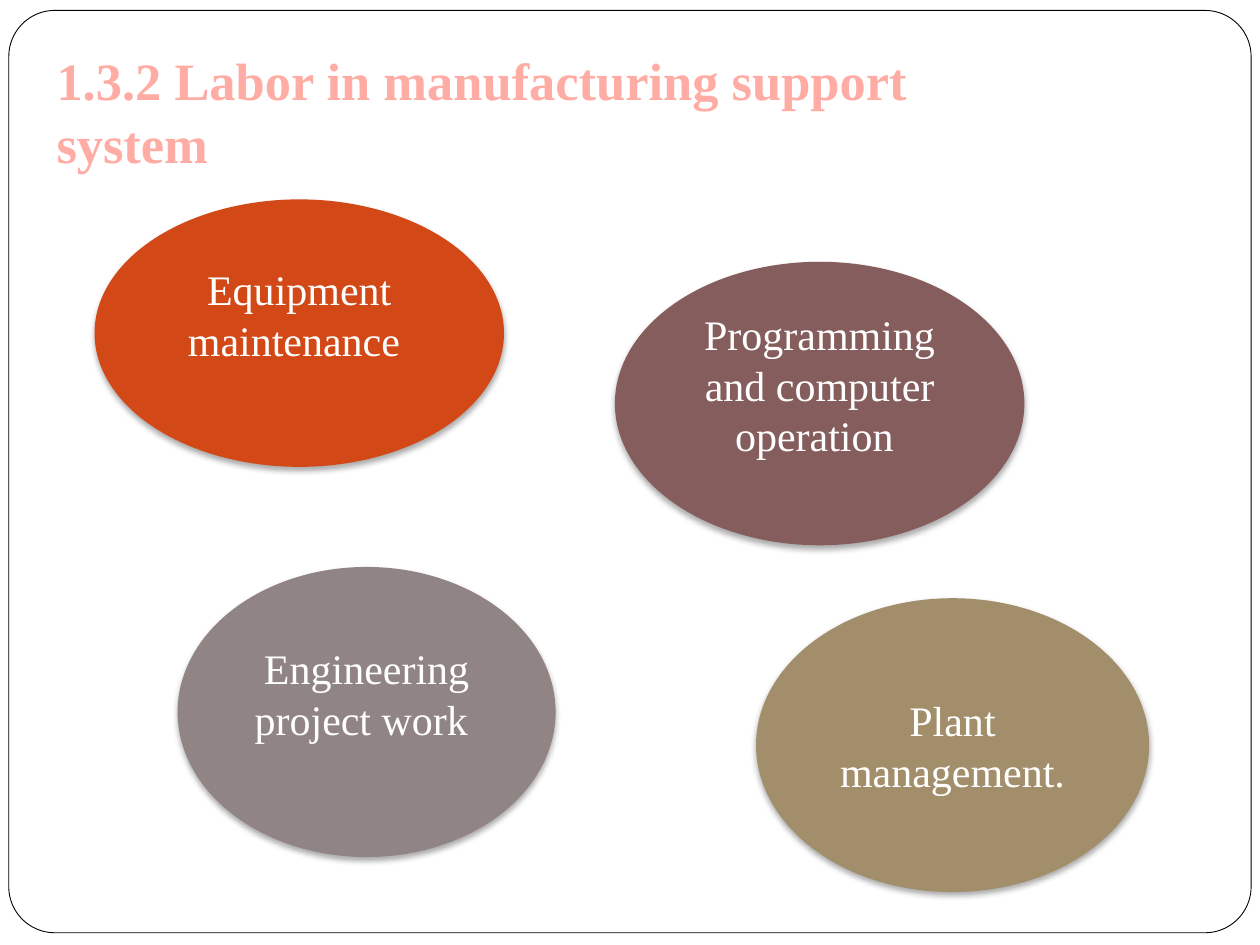
"""Build the slide on labor in manufacturing support systems."""
from lxml import etree
from pptx import Presentation
from pptx import util as u
from pptx.dml.color import RGBColor
from pptx.enum import shapes, text
from pptx.oxml import ns

TITLE = "1.3.2 Labor in manufacturing support system"
ROLES = [
    {"name": "Equipment maintenance ", "at": (0.075, 0.211, 0.325, 0.283), "fill": "orange", "lift": 0.3},
    {"name": "Plant management.", "at": (0.6, 0.633, 0.312, 0.311), "fill": "sand", "lift": 0},
    {"name": "Engineering project work ", "at": (0.141, 0.6, 0.3, 0.307), "fill": "gray", "lift": 0.3},
    {"name": "Programming and computer operation ", "at": (0.488, 0.277, 0.325, 0.3), "fill": "plum", "lift": 0.3},
]
FRAME_AT = (0.007, 0.011, 0.986, 0.976)
TITLE_AT = (0.035, 0.044, 0.802, 0.147)
THEME = {
    "font": "Times New Roman", "title_size": 30, "role_size": 24,
    "white": "FFFFFF", "black": "000000", "title": "FFACA4",
    "orange": "D34817", "sand": "A28E6A", "gray": "918485", "plum": "855D5D",
}
WIDTH, HEIGHT = u.Inches(10), u.Inches(7.5)


def color(key):
    return RGBColor.from_string(THEME[key])


def place(shares):
    return [int(share * side) for share, side in zip(shares, (WIDTH, HEIGHT) * 2)]


def add_shape(s, kind, shares, fill):
    sp = s.shapes.add_shape(kind, *place(shares))
    sp.shadow.inherit = False
    sp.fill.solid()
    sp.fill.fore_color.rgb = color(fill)
    return sp


def write(tf, words, size, key, bold=False):
    tf.word_wrap = True
    p = tf.paragraphs[0]
    r = p.add_run()
    r.text = words
    r.font.name = THEME["font"]
    r.font.size = u.Pt(THEME[size])
    r.font.bold = bold
    r.font.color.rgb = color(key)
    return p


def add_shadow(sp):
    effects = sp._element.spPr.find(ns.qn("a:effectLst"))
    shadow = etree.SubElement(
        effects, ns.qn("a:outerShdw"), blurRad=str(u.Pt(3.5)),
        dist=str(u.Pt(2.2)), dir="5400000", rotWithShape="0")
    tone = etree.SubElement(shadow, ns.qn("a:srgbClr"), val=THEME["black"])
    etree.SubElement(tone, ns.qn("a:alpha"), val="32000")


def add_role(s, role):
    sp = add_shape(s, shapes.MSO_SHAPE.OVAL, role["at"], role["fill"])
    sp.line.fill.background()
    add_shadow(sp)
    tf = sp.text_frame
    tf.vertical_anchor = text.MSO_ANCHOR.MIDDLE
    tf.margin_bottom = u.Inches(0.05 + role["lift"])
    p = write(tf, role["name"], "role_size", "white")
    p.alignment = text.PP_ALIGN.CENTER


def main():
    prs = Presentation()
    prs.slide_width, prs.slide_height = WIDTH, HEIGHT
    s = prs.slides.add_slide(prs.slide_layouts[6])
    frame = add_shape(s, shapes.MSO_SHAPE.ROUNDED_RECTANGLE, FRAME_AT, "white")
    frame.adjustments[0] = 0.05
    frame.line.color.rgb = color("black")
    frame.line.width = u.Pt(0.5)
    title = s.shapes.add_textbox(*place(TITLE_AT))
    write(title.text_frame, TITLE, "title_size", "title", bold=True)
    for role in ROLES:
        add_role(s, role)
    prs.save("out.pptx")


if __name__ == "__main__":
    main()
